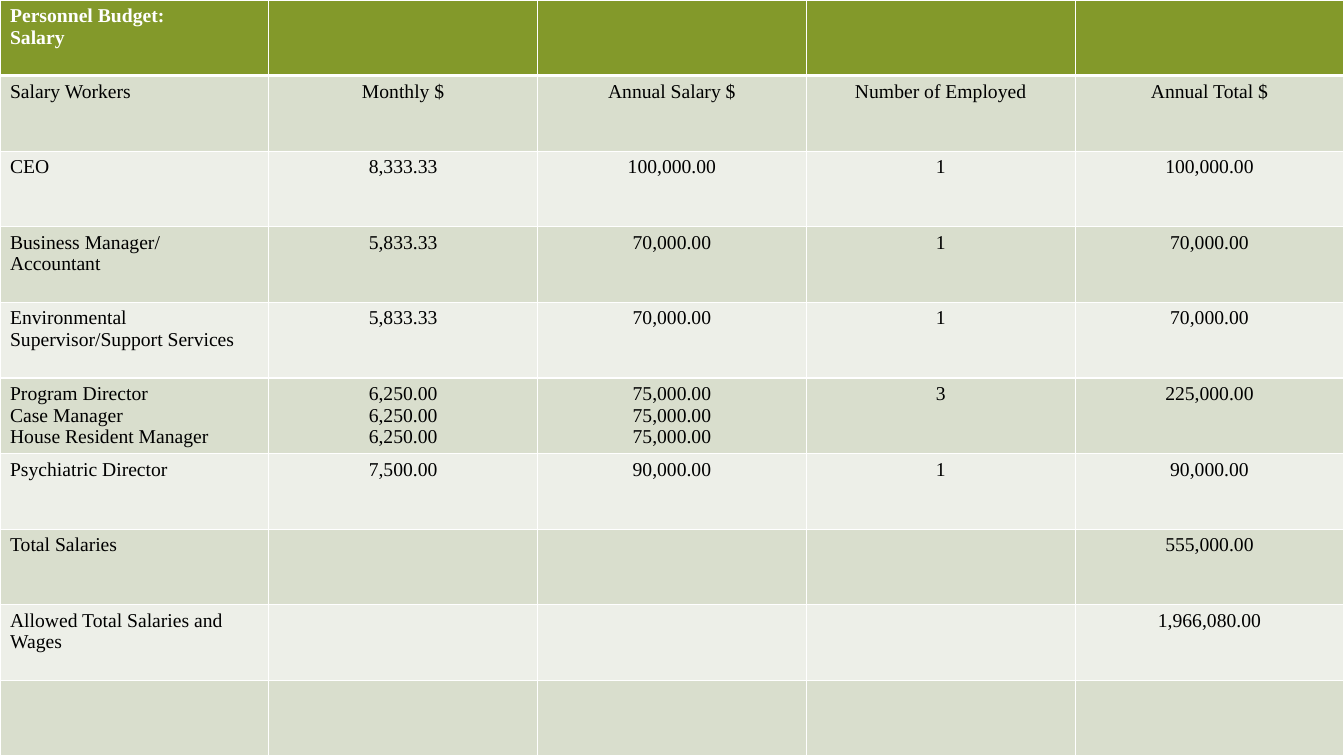
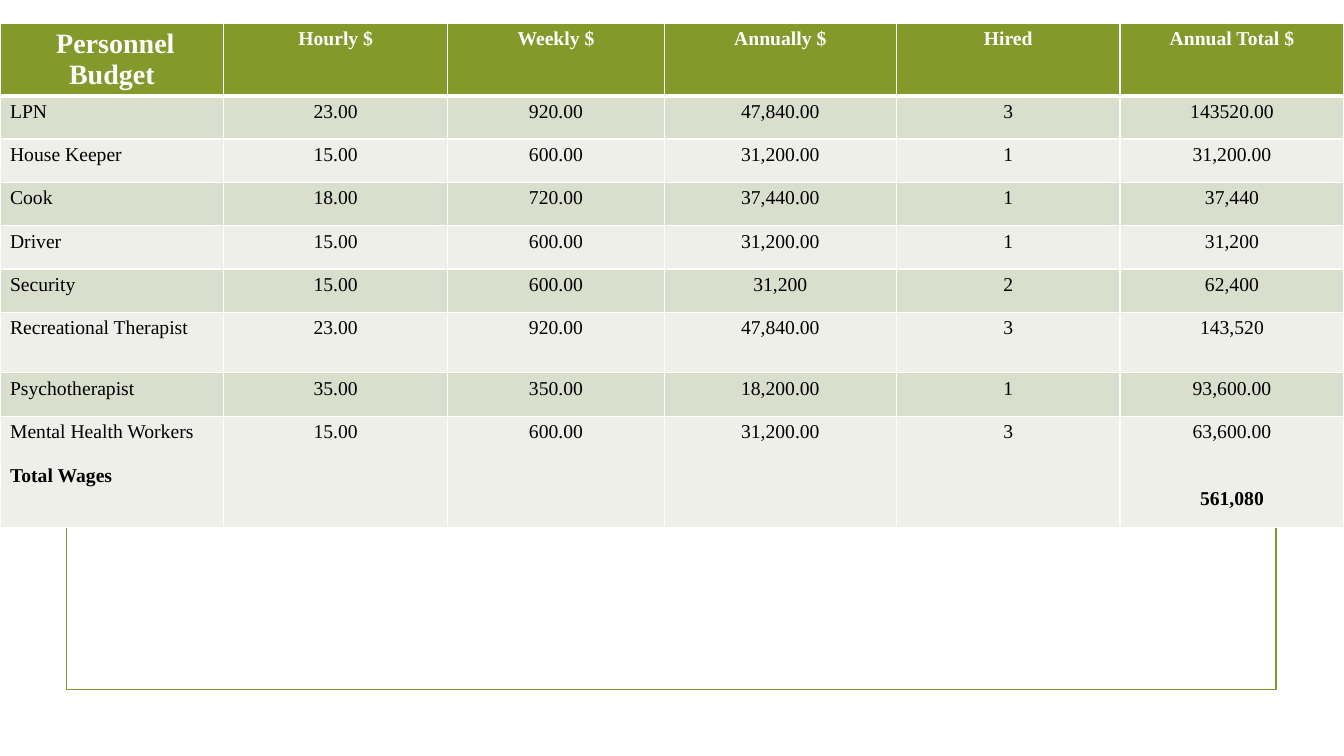
from dataclasses import dataclass

from lxml.etree import SubElement
from pptx import Presentation
from pptx.dml.color import RGBColor as RGB
from pptx.enum.shapes import MSO_SHAPE as SHAPE
from pptx.enum.text import PP_ALIGN as ALIGN
from pptx.oxml.ns import qn
from pptx.util import Inches, Pt

WIDTH, HEIGHT = 13.33, 7.5


@dataclass(frozen=True)
class Theme:
    font: str = "Times New Roman"
    olive: str = "83992A"
    dark_band: str = "D9DECD"
    light_band: str = "EDEFE8"
    white: str = "FFFFFF"
    black: str = "000000"
    heading: int = 20
    body: int = 14
    frame: float = 1.25
    rule: int = 1
    header_rule: int = 3


class Deck:
    def __init__(self, theme):
        self.theme = theme
        self.prs = Presentation()
        self.prs.slide_width = Inches(WIDTH)
        self.prs.slide_height = Inches(HEIGHT)
        self.layout = self.prs.slide_layouts[6]
        self.s = None

    def slide(self):
        self.s = self.prs.slides.add_slide(self.layout)

    def shared_frame(self, x, y, w, h):
        """Draw a frame and move it to the layout that all slides use."""
        sp = self.s.shapes.add_shape(SHAPE.RECTANGLE, Inches(x), Inches(y),
                                     Inches(w), Inches(h))
        sp.shadow.inherit = False
        sp.fill.background()
        sp.line.color.rgb = RGB.from_string(self.theme.olive)
        sp.line.width = Pt(self.theme.frame)
        self.layout.shapes._spTree.append(sp._element)

    def style(self, p, size, color, bold):
        for r in p.runs:
            r.font.name = self.theme.font
            r.font.size = Pt(size)
            r.font.bold = bold
            r.font.color.rgb = RGB.from_string(color)

    def borders(self, cell, top, bottom):
        tc_pr = cell._tc.get_or_add_tcPr()
        rule = self.theme.rule
        for side, width in (("L", rule), ("R", rule), ("T", top), ("B", bottom)):
            ln = SubElement(tc_pr, qn(f"a:ln{side}"), w=str(Pt(width)))
            fill = SubElement(ln, qn("a:solidFill"))
            SubElement(fill, qn("a:srgbClr"), val=self.theme.white)

    def cell(self, cell, text, row, centered):
        t = self.theme
        header = row == 0
        self.borders(cell, t.header_rule if row == 1 else t.rule,
                     t.header_rule if header else t.rule)
        band = t.dark_band if row % 2 else t.light_band
        cell.fill.solid()
        cell.fill.fore_color.rgb = RGB.from_string(t.olive if header else band)
        cell.text_frame.text = text
        for p in cell.text_frame.paragraphs:
            p.alignment = ALIGN.CENTER if centered else ALIGN.LEFT
            self.style(p, t.body, t.white if header else t.black, header)

    def table(self, y, cols, heights, rows, center_corner=False):
        """Draw a banded table; the first column holds the labels."""
        shape = self.s.shapes.add_table(len(rows), len(cols), 0, Inches(y),
                                        Inches(sum(cols)), Inches(sum(heights)))
        tbl = shape.table
        for col, w in zip(tbl.columns, cols):
            col.width = Inches(w)
        for row, h in zip(tbl.rows, heights):
            row.height = Inches(h)
        for i, values in enumerate(rows):
            for j, text in enumerate(values):
                centered = j > 0 or (i == 0 and center_corner)
                self.cell(tbl.cell(i, j), text, i, centered)
        return tbl

    def total(self, cell, gap):
        """Set the last paragraph of a cell apart as a bold total."""
        p = cell.text_frame.paragraphs[-1]
        p.space_before = Pt(gap)
        self.style(p, self.theme.body, self.theme.black, True)


SALARIES = [
    ("Personnel Budget:\nSalary", "", "", "", ""),
    ("Salary Workers", "Monthly $", "Annual Salary $", "Number of Employed",
     "Annual Total $"),
    ("CEO", "8,333.33", "100,000.00", "1", "100,000.00"),
    ("Business Manager/\nAccountant", "5,833.33", "70,000.00", "1", "70,000.00"),
    ("Environmental Supervisor/Support Services", "5,833.33", "70,000.00", "1",
     "70,000.00"),
    ("Program Director\nCase Manager\nHouse Resident Manager",
     "6,250.00\n6,250.00\n6,250.00", "75,000.00\n75,000.00\n75,000.00", "3",
     "225,000.00"),
    ("Psychiatric Director", "7,500.00", "90,000.00", "1", "90,000.00"),
    ("Total Salaries", "", "", "", "555,000.00"),
    ("Allowed Total Salaries and Wages", "", "", "", "1,966,080.00"),
    ("", "", "", "", ""),
]

WAGES = [
    (" Personnel Budget", "Hourly $", "Weekly $", "Annually $", "Hired",
     "Annual Total $"),
    ("LPN", "23.00", "920.00", "47,840.00", "3", "143520.00"),
    ("House Keeper", "15.00", "600.00", "31,200.00", "1", "31,200.00"),
    ("Cook", "18.00", "720.00", "37,440.00", "1", "37,440"),
    ("Driver", "15.00", "600.00", "31,200.00", "1", "31,200"),
    ("Security", "15.00", "600.00", "31,200", "2", "62,400"),
    ("Recreational Therapist", "23.00", "920.00", "47,840.00", "3", "143,520"),
    ("Psychotherapist", "35.00", "350.00", "18,200.00", "1", "93,600.00"),
    ("Mental Health Workers\nTotal Wages", "15.00", "600.00", "31,200.00", "3",
     "63,600.00\n561,080"),
]


def main():
    theme = Theme()
    deck = Deck(theme)

    # Salaries: an even grid that fills the slide, over the shared frame
    deck.slide()
    deck.shared_frame(0.66, 0.67, 12, 6.17)
    n_cols, n_rows = len(SALARIES[0]), len(SALARIES)
    deck.table(0, [WIDTH / n_cols] * n_cols, [HEIGHT / n_rows] * n_rows, SALARIES)

    # Wages: a shorter table with a larger corner heading
    deck.slide()
    tbl = deck.table(0.23, [2.22, 2.22, 2.15, 2.3, 2.22, 2.22],
                     [0.72] + [0.43] * 5 + [0.6, 0.43, 1.1], WAGES,
                     center_corner=True)
    deck.style(tbl.cell(0, 0).text_frame.paragraphs[0], theme.heading,
               theme.white, True)

    # Totals in the last row
    last = len(WAGES) - 1
    deck.total(tbl.cell(last, 0), 16)
    deck.total(tbl.cell(last, 5), 32)

    deck.prs.save("out.pptx")


if __name__ == "__main__":
    main()
